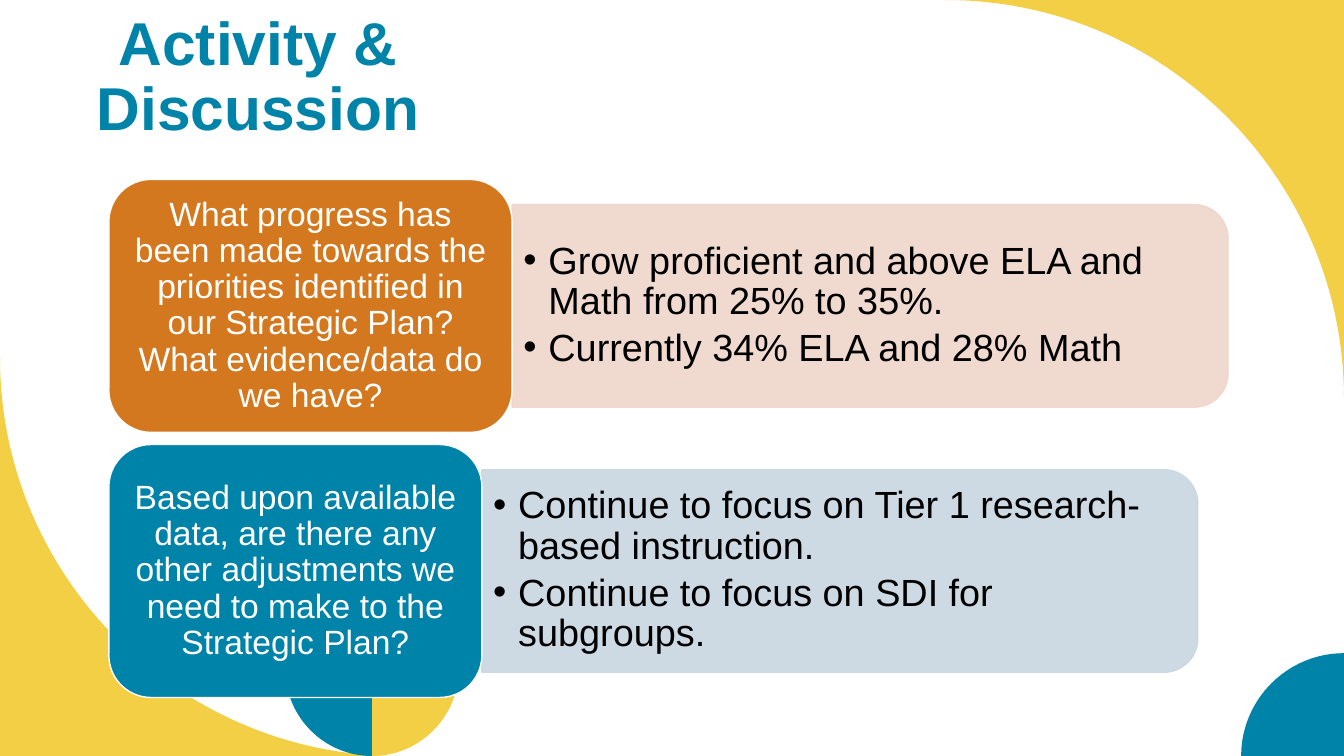
from dataclasses import dataclass
from math import cos, radians, sin

from lxml.etree import SubElement
from pptx import Presentation
from pptx.dml.color import RGBColor
from pptx.enum.shapes import MSO_SHAPE
from pptx.enum.text import MSO_ANCHOR, MSO_AUTO_SIZE, PP_ALIGN
from pptx.oxml.ns import qn
from pptx.util import Inches, Pt

WIDE, HIGH = 13.33, 7.5
GOLD, TEAL, RUST = "F3CF45", "0083A9", "D4781F"
WHITE, BLACK = "FFFFFF", "000000"
PULL = 0.55  # handle length of a quarter circle, in radii
Point = tuple[float, float]


@dataclass
class Arc:
    """A quarter circle, as one cubic curve."""
    x: float
    y: float
    r: float
    start: int
    end: int

    def spot(self, angle: int, pull: float = 0) -> Point:
        c, s = cos(radians(angle)), sin(radians(angle))
        return self.x + self.r * (c - pull * s), self.y + self.r * (s + pull * c)

    def points(self) -> list[Point]:
        pull = PULL if self.end > self.start else -PULL
        return [self.spot(self.start), self.spot(self.start, pull),
                self.spot(self.end, -pull), self.spot(self.end)]


@dataclass
class Curve:
    color: str
    arcs: list[Arc]
    corner: list[Point]


@dataclass
class Row:
    top: float
    wide: float
    color: str
    tint: str
    ask: str
    items: list[str]


BIG, SMALL, LEAF, MID = 3.95, 1.02, 0.86, 3.69
CURVES = [
    Curve(GOLD, [Arc(WIDE - BIG, BIG, BIG, -90, 0)], [(WIDE, 0)]),
    Curve(GOLD, [Arc(BIG, HIGH - BIG, BIG, 90, 180)], [(0, HIGH)]),
    Curve(TEAL, [Arc(WIDE, HIGH, SMALL, 180, 270)], [(WIDE, HIGH)]),
    Curve(GOLD, [Arc(MID, HIGH - LEAF, LEAF, 0, 90),
                 Arc(MID + LEAF, 6.97, LEAF, 180, 270)], []),
    Curve(TEAL, [Arc(MID, HIGH - LEAF, LEAF, 180, 90),
                 Arc(MID - LEAF, 6.97, LEAF, 0, -90)], []),
]
ROWS = [
    Row(1.78, 4, RUST, "EFD6CB",
        "What progress has been made towards the priorities identified in "
        "our Strategic Plan? What evidence/data do we have?",
        ["Grow proficient and above ELA and Math from 25% to 35%.",
         "Currently 34% ELA and 28% Math"]),
    Row(4.41, 3.7, TEAL, "C9D7E1",
        "Based upon available data, are there any other adjustments we need "
        "to make to the Strategic Plan?",
        ["Continue to focus on Tier 1 research- based instruction.",
         "Continue to focus on SDI for subgroups."]),
]
LEFT, TALL = 1.08, 2.51
LONG, THICK = 7.1, 2.01


def rgb(code: str) -> RGBColor:
    return RGBColor.from_string(code)


def place(shape, x: float, y: float, w: float, h: float) -> None:
    shape.left, shape.top = Inches(x), Inches(y)
    shape.width, shape.height = Inches(w), Inches(h)


def paint(shape, fill: str, line: str = "") -> None:
    shape.shadow.inherit = False
    shape.fill.solid()
    shape.fill.fore_color.rgb = rgb(fill)
    if line:
        shape.line.color.rgb = rgb(line)
        shape.line.width = Pt(1)
    else:
        shape.line.fill.background()


def style(shape, size: float, color: str, side: float, edge: float,
          align: PP_ALIGN, bold: bool = False) -> None:
    frame = shape.text_frame
    frame.word_wrap, frame.auto_size = True, MSO_AUTO_SIZE.NONE
    frame.vertical_anchor = MSO_ANCHOR.MIDDLE
    frame.margin_left = frame.margin_right = Inches(side)
    frame.margin_top = frame.margin_bottom = Inches(edge)
    for i, para in enumerate(frame.paragraphs):
        para.alignment, para.line_spacing = align, 0.9
        para.space_before, para.space_after = Pt(4 if i else 0), Pt(0)
        for run in para.runs:
            run.font.name, run.font.size, run.font.bold = "Arial", Pt(size), bold
            run.font.color.rgb = rgb(color)


def bullet(para) -> None:
    props = para._p.get_or_add_pPr()
    props.set("marL", str(Inches(0.25)))
    props.set("indent", str(Inches(-0.25)))
    SubElement(props, qn("a:buFont"), typeface="Arial")
    SubElement(props, qn("a:buChar"), char="•")


def draw_curve(slide, curve: Curve) -> None:
    spots = [p for arc in curve.arcs for p in arc.points()] + curve.corner
    first, *rest = [(Inches(x), Inches(y)) for x, y in spots]
    pen = slide.shapes.build_freeform(*first)
    pen.add_line_segments(rest, close=True)
    shape = pen.convert_to_shape()
    paint(shape, curve.color)

    # Bend each arc's three segments into one cubic curve
    lines = list(shape._element.iter(qn("a:lnTo")))
    for i in range(len(curve.arcs)):
        trio = lines[4 * i:4 * i + 3]
        bend = trio[0].makeelement(qn("a:cubicBezTo"))
        trio[0].addprevious(bend)
        for line in trio:
            bend.append(line[0])
            line.getparent().remove(line)


def draw_row(slide, row: Row, body) -> None:
    edge = LEFT + row.wide
    center = row.top + TALL / 2

    # Panel: a tall shape turned on its side
    panel = slide.shapes.add_shape(
        MSO_SHAPE.ROUND_2_SAME_RECTANGLE,
        Inches(edge + (LONG - THICK) / 2), Inches(center - LONG / 2),
        Inches(THICK), Inches(LONG))
    panel.rotation = 90
    panel.adjustments[0], panel.adjustments[1] = 0.167, 0
    paint(panel, row.tint, row.tint)
    for color in panel._element.spPr.iter(qn("a:srgbClr")):
        SubElement(color, qn("a:alpha"), val="90000")

    # List, raised above its panel
    place(body, edge, center - 0.91, 7.01, 1.81)
    body.text_frame.text = "\n".join(row.items)
    style(body, 27, BLACK, 0.11, 0.06, PP_ALIGN.LEFT)
    for para in body.text_frame.paragraphs:
        bullet(para)
    slide.shapes._spTree.append(body._element)

    # Question
    card = slide.shapes.add_shape(
        MSO_SHAPE.ROUNDED_RECTANGLE, Inches(LEFT), Inches(row.top),
        Inches(row.wide), Inches(TALL))
    card.adjustments[0] = 0.167
    paint(card, row.color, WHITE)
    card.text_frame.text = row.ask
    style(card, 24, WHITE, 0.1, 0.05, PP_ALIGN.CENTER)


def main() -> None:
    deck = Presentation()
    deck.slide_width, deck.slide_height = Inches(WIDE), Inches(HIGH)
    slide = deck.slides.add_slide(deck.slide_layouts[3])
    title, *bodies = slide.placeholders

    # Background curves
    for curve in CURVES:
        draw_curve(slide, curve)

    # Title
    place(title, 0.58, 0.1, 3.96, 1.35)
    title.text_frame.text = "Activity & Discussion"
    style(title, 43.2, TEAL, 0.1, 0.05, PP_ALIGN.CENTER, bold=True)
    slide.shapes._spTree.append(title._element)

    # Questions and answers
    for row, body in zip(ROWS, bodies):
        draw_row(slide, row, body)

    deck.save("out.pptx")


if __name__ == "__main__":
    main()
